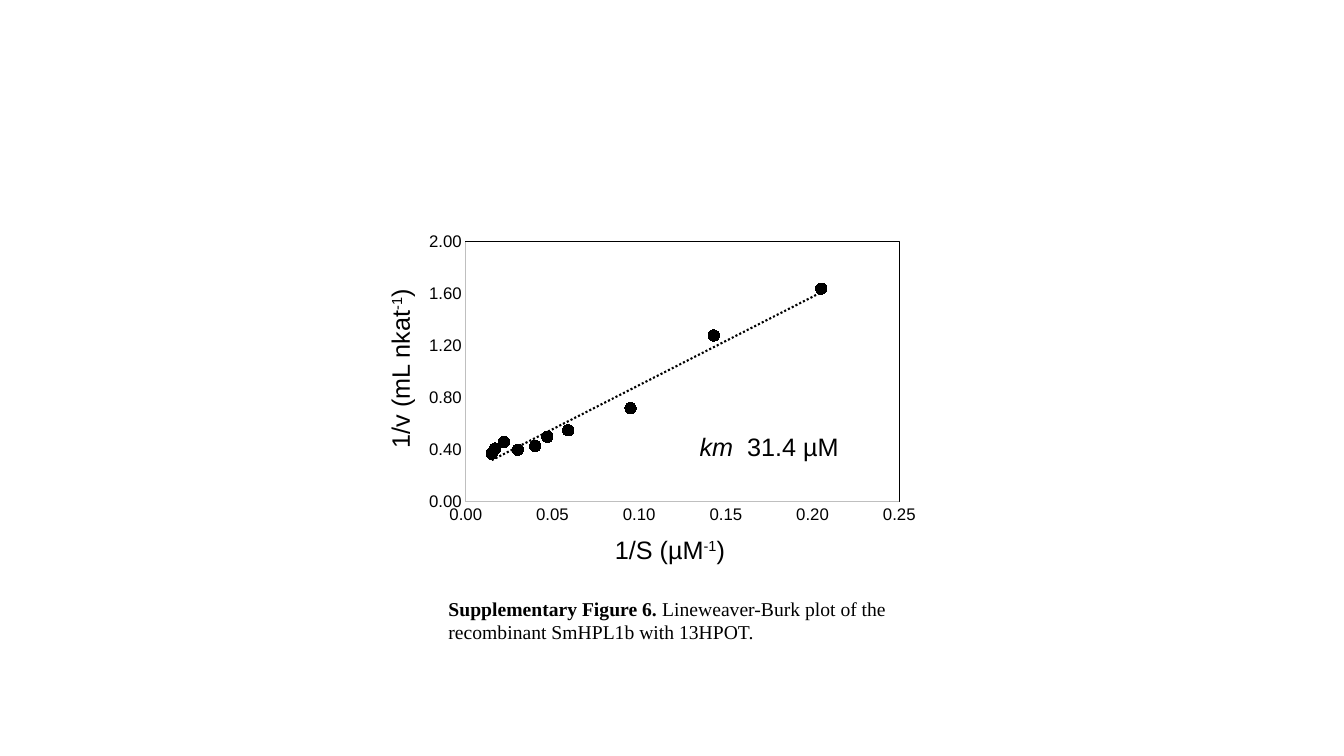
from pptx import Presentation
from pptx.chart.data import XyChartData
from pptx.dml.color import RGBColor
from pptx.enum.chart import XL_CHART_TYPE as ChartType
from pptx.enum.chart import XL_MARKER_STYLE as Marker
from pptx.enum.chart import XL_TICK_MARK as TickMark
from pptx.enum.text import MSO_AUTO_SIZE as AutoSize
from pptx.oxml import parse_xml
from pptx.oxml.ns import nsdecls, qn
from pptx.util import Inches, Pt

COLORS = {"ink": "000000", "axis": "BFBFBF"}
SANS, SERIF = "Arial", "Times New Roman"

# Reciprocal substrate concentration and reciprocal velocity
KINETICS = [
    (0.015, 0.37), (0.017, 0.41), (0.022, 0.46), (0.03, 0.4), (0.04, 0.43),
    (0.047, 0.5), (0.059, 0.55), (0.095, 0.72), (0.143, 1.28), (0.205, 1.64),
]


def rgb(name):
    return RGBColor.from_string(COLORS[name])


def style_axis(axis, maximum, step):
    axis.minimum_scale, axis.maximum_scale, axis.major_unit = 0, maximum, step
    axis.has_major_gridlines = False
    axis.has_title = False
    axis.major_tick_mark = axis.minor_tick_mark = TickMark.NONE
    axis.tick_labels.number_format = "0.00"
    axis.tick_labels.number_format_is_linked = False
    axis.format.line.color.rgb = rgb("axis")
    axis.format.line.width = Pt(0.75)


def add_trendline(series):
    trendline = parse_xml(
        f'<c:trendline {nsdecls("c", "a")}><c:spPr><a:ln w="{Pt(1.5)}">'
        f'<a:solidFill><a:srgbClr val="{COLORS["ink"]}"/></a:solidFill>'
        '<a:prstDash val="sysDot"/></a:ln></c:spPr>'
        '<c:trendlineType val="linear"/>'
        '<c:dispRSqr val="0"/><c:dispEq val="0"/></c:trendline>')
    series._element.find(qn("c:xVal")).addprevious(trendline)


def frame_plot(chart, x, y, w, h):
    """Place the inner plot area, in fractions of the chart, and outline it."""
    plot_area = chart._chartSpace.chart.plotArea
    for old_layout in plot_area.findall(qn("c:layout")):
        plot_area.remove(old_layout)
    edges = "".join(f'<c:{tag} val="{value}"/>'
                    for tag, value in zip("xywh", (x, y, w, h)))
    plot_area.insert(0, parse_xml(
        f'<c:layout {nsdecls("c")}><c:manualLayout>'
        '<c:layoutTarget val="inner"/><c:xMode val="edge"/>'
        f'<c:yMode val="edge"/>{edges}</c:manualLayout></c:layout>'))
    plot_area.append(parse_xml(
        f'<c:spPr {nsdecls("c", "a")}><a:noFill/><a:ln w="{Pt(0.75)}">'
        f'<a:solidFill><a:srgbClr val="{COLORS["ink"]}"/></a:solidFill>'
        '</a:ln></c:spPr>'))


def add_kinetics_chart(slide, left, top, width, height):
    data = XyChartData(number_format="0.00")
    points = data.add_series("Series 1")
    for substrate, velocity in KINETICS:
        points.add_data_point(substrate, velocity)
    chart = slide.shapes.add_chart(
        ChartType.XY_SCATTER, Inches(left), Inches(top),
        Inches(width), Inches(height), data).chart
    chart.has_title = False
    chart.has_legend = False
    chart.font.name, chart.font.size = SANS, Pt(12)
    chart.font.color.rgb = rgb("ink")
    chart.plots[0].vary_by_categories = False

    style_axis(chart.category_axis, 0.25, 0.05)
    style_axis(chart.value_axis, 2, 0.4)

    series = chart.plots[0].series[0]
    series.smooth = False
    series.format.line.fill.background()
    series.marker.style, series.marker.size = Marker.CIRCLE, 8
    series.marker.format.fill.solid()
    series.marker.format.fill.fore_color.rgb = rgb("ink")
    series.marker.format.line.color.rgb = rgb("ink")
    add_trendline(series)
    frame_plot(chart, 0.09, 0.05, 0.86, 0.86)


def add_text(slide, left, top, width, height, pieces,
             font=SANS, size=18, wrap=False, rotation=0):
    """Add one paragraph made of (text, style) pieces."""
    box = slide.shapes.add_textbox(
        Inches(left), Inches(top), Inches(width), Inches(height))
    box.rotation = rotation
    frame = box.text_frame
    frame.word_wrap = wrap
    frame.auto_size = AutoSize.SHAPE_TO_FIT_TEXT
    for text, style in pieces:
        run = frame.paragraphs[0].add_run()
        run.text = text
        run.font.name, run.font.size = font, Pt(size)
        run.font.color.rgb = rgb("ink")
        run.font.bold = style == "bold"
        run.font.italic = style == "italic"
        if style == "super":
            run._r.get_or_add_rPr().set("baseline", "30000")


def add_axis_title(slide, left, top, width, quantity, rotation=0):
    add_text(slide, left, top, width, 0.4,
             [(quantity, ""), ("-1", "super"), (")", "")], rotation=rotation)


def main():
    prs = Presentation()
    prs.slide_width, prs.slide_height = Inches(13.33), Inches(7.5)
    slide = prs.slides.add_slide(prs.slide_layouts[6])

    # Plot with its axis titles
    add_kinetics_chart(slide, 4.17, 2.25, 5, 3)
    add_axis_title(slide, 6, 5.25, 1.32, "1/S (µM")
    add_axis_title(slide, 3.06, 3.44, 1.81, "1/v (mL nkat", rotation=270)

    # Michaelis constant
    add_text(slide, 6.84, 4.23, 1.6, 0.4,
             [("km", "italic"), ("  31.4 µM", "")])

    # Caption
    add_text(slide, 4.35, 5.87, 4.64, 0.57,
             [("Supplementary Figure 6.", "bold"),
              (" Lineweaver-Burk plot of the recombinant SmHPL1b with 13HPOT.", "")],
             font=SERIF, size=14, wrap=True)

    prs.save("out.pptx")


if __name__ == "__main__":
    main()
